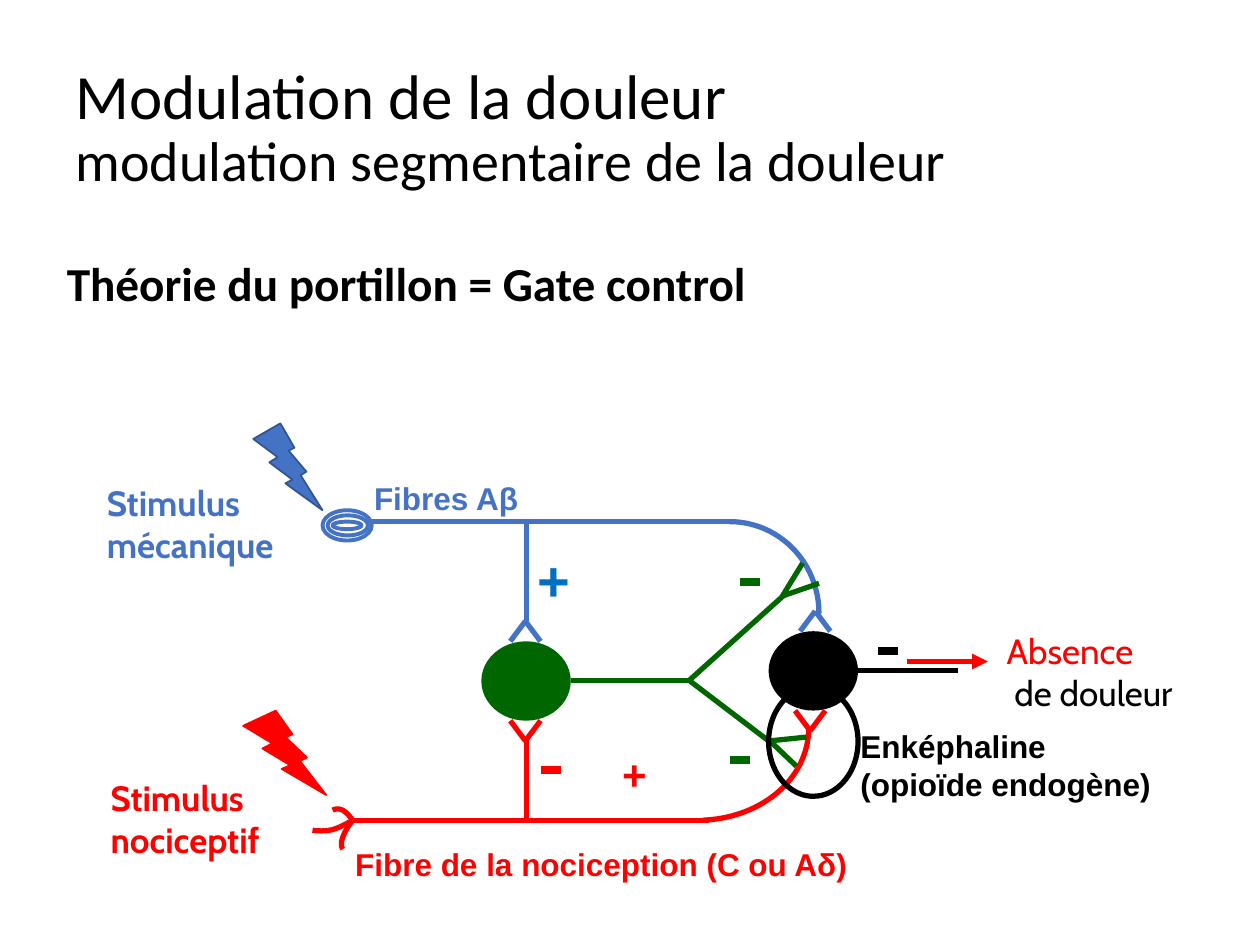
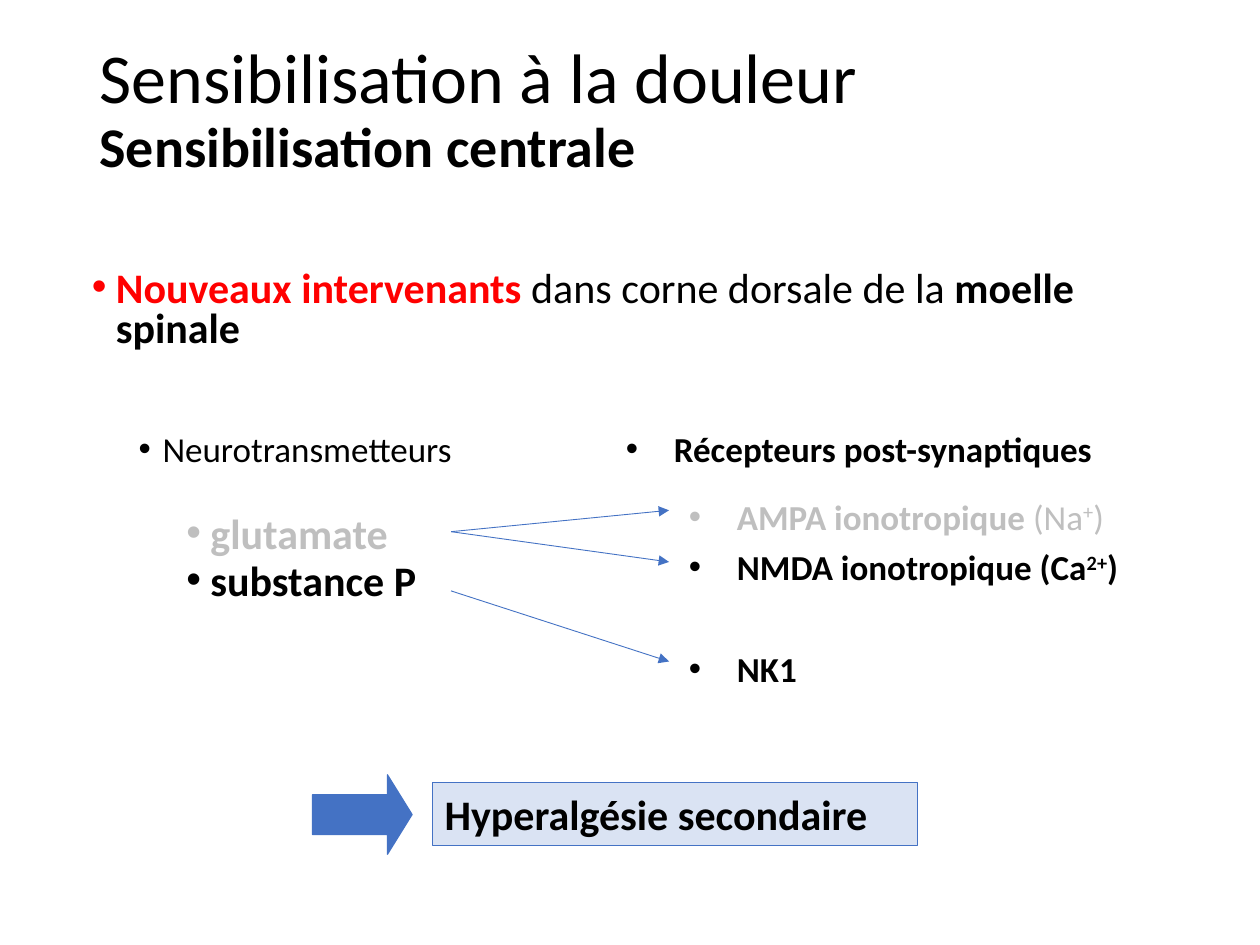
"""Build two slides on pain modulation and central sensitisation."""
import dataclasses
import itertools

import pptx
import pptx.dml.color
import pptx.enum.shapes
import pptx.enum.text
import pptx.oxml
import pptx.oxml.ns
import pptx.util

Inches, Pt = pptx.util.Inches, pptx.util.Pt
SHAPE = pptx.enum.shapes.MSO_SHAPE


@dataclasses.dataclass(frozen=True)
class Theme:
    black: str = "000000"
    blue: str = "4472C4"
    navy: str = "325491"
    azure: str = "0070C0"
    pale: str = "DAE3F3"
    red: str = "FF0000"
    green: str = "006600"
    grey: str = "BFBFBF"
    body: str = "Calibri"
    diagram: str = "Arial"
    stimulus: str = "Cabin"
    title: int = 40
    title_small: int = 36
    subtitle: int = 32
    lead: int = 27
    strong: int = 24
    text: int = 20
    label: int = 18
    stroke: float = 3
    minus: float = 4.5


T = Theme()


def run(text, size, color=T.black, bold=False, font=T.body, raised=False):
    return dict(text=text, size=size, color=color, bold=bold, font=font, raised=raised)


def para(*runs, **layout):
    return dict(runs=runs, **layout)


def bullet(*runs, level=0, left=0.19, hang=0.19, spacing=0.8, before=0):
    return para(*runs, level=level, left=left, hang=hang, spacing=spacing, before=before, mark="•")


def label(lines, size, color, font=T.diagram, bold=True):
    return [para(run(line, size, color, bold, font)) for line in lines]


GATE_TITLE = [para(run("Modulation de la douleur", T.title_small), spacing=0.9),
              para(run("modulation segmentaire de la douleur", T.subtitle), spacing=0.9)]
GATE_BODY = [para(run("Théorie du portillon = Gate control", T.lead, bold=True),
                  spacing=0.9, before=7.5, left=0, hang=0, mark=None)]

CURVES = [
    (T.blue, [(5.79, 4.14), (6.18, 4.14), (6.5, 4.46), (6.5, 4.87)]),
    (T.red, [(5.58, 6.51), (6.05, 6.49), (6.42, 6.18), (6.42, 5.77)]),
    (T.red, [(2.8, 6.51), (2.75, 6.44), (2.7, 6.4), (2.64, 6.43)]),
    (T.red, [(2.8, 6.51), (2.69, 6.57), (2.63, 6.61), (2.48, 6.59)]),
    (T.red, [(2.8, 6.51), (2.73, 6.6), (2.69, 6.69), (2.72, 6.74)]),
]
NERVES = [
    (T.blue, [(2.95, 4.14), (5.79, 4.14)]),
    (T.blue, [(4.18, 4.14), (4.18, 4.93)]),
    (T.red, [(2.8, 6.51), (5.63, 6.51)]),
    (T.red, [(4.18, 5.88), (4.18, 6.51)]),
    (T.green, [(4.53, 5.4), (5.47, 5.4), (6.26, 4.69)]),
    (T.green, [(5.47, 5.4), (6.1, 5.88)]),
    (T.green, [(6.37, 4.47), (6.21, 4.73), (6.5, 4.63)]),
    (T.green, [(6.32, 6.08), (6.11, 5.88), (6.4, 5.85)]),
    (T.black, [(6.81, 5.32), (7.6, 5.32)]),
]
SYNAPSES = [(T.red, 4.17, 5.88, -0.16), (T.blue, 4.17, 4.93, 0.16),
            (T.red, 6.43, 5.8, -0.16), (T.blue, 6.47, 4.85, 0.16)]
MINUS_SIGNS = [(T.red, 4.29, 6.11), (T.black, 6.97, 5.17),
               (T.green, 5.79, 6.03), (T.green, 5.87, 4.62)]
CELLS = [((3.82, 5.09, 0.71, 0.63), T.green), ((6.1, 5.01, 0.71, 0.63), T.black)]
RINGS = [((6.1, 5.45, 0.71, 0.87), T.black, T.stroke)] + [
    (box, T.blue, 2.25) for box in
    [(2.56, 4.05, 0.39, 0.24), (2.6, 4.09, 0.32, 0.16), (2.64, 4.14, 0.23, 0.06)]]
BOLTS = [((2.01, 3.36, 0.55, 0.69), T.blue, T.navy), ((1.93, 5.64, 0.66, 0.67), T.red, T.red)]
LABELS = [
    ((7.89, 4.95, 1.61, 0.77), False,
     label(["Absence"], T.text, T.red, T.stimulus, False)
     + label([" de douleur"], T.text, T.black, T.stimulus, False)),
    ((4.84, 5.89, 0.4, 0.5), False, label(["+"], T.strong, T.red)),
    ((4.17, 4.28, 0.46, 0.63), False, label(["+"], T.subtitle, T.azure)),
    ((6.73, 5.72, 2.51, 0.7), False,
     label(["Enképhaline", "(opioïde endogène)"], T.label, T.black)),
    ((2.72, 6.66, 4.12, 0.4), False,
     label(["Fibre de la nociception (C ou Aδ)"], T.label, T.red)),
    ((2.87, 3.75, 1.35, 0.4), False, label(["Fibres Aβ"], T.label, T.blue)),
    ((0.75, 3.77, 1.83, 0.77), True,
     label(["Stimulus mécanique"], T.text, T.blue, T.stimulus)),
    ((0.78, 6.11, 1.73, 0.77), True,
     label(["Stimulus nociceptif"], T.text, T.red, T.stimulus)),
]

CENTRAL_TITLE = [para(run("Sensibilisation à la douleur", T.title), spacing=0.9),
                 para(run("Sensibilisation centrale", T.subtitle, bold=True), spacing=0.9)]
CENTRAL_BODY = [
    bullet(run("Nouveaux intervenants ", T.strong, T.red, True),
           run("dans corne dorsale de la ", T.strong),
           run("moelle spinale", T.strong, bold=True), before=7.5),
    bullet(run("Neurotransmetteurs", T.text), level=1, left=0.56, before=48.3),
    bullet(run("glutamate", T.strong, T.grey, True), level=2, left=0.94, before=27.1),
    bullet(run("substance P", T.strong, bold=True), level=2, left=0.94, before=3.8),
]
RECEPTORS = [
    bullet(run("Récepteurs post-synaptiques", T.text, bold=True), level=1, left=0.88, hang=0.38),
    bullet(run("AMPA ionotropique ", T.text, T.grey, True), run("(Na", T.text, T.grey),
           run("+", T.text, T.grey, raised=True), run(")", T.text, T.grey),
           level=2, left=1.38, hang=0.38, before=19.5),
    bullet(run("NMDA ionotropique (Ca", T.text, bold=True),
           run("2+", T.text, bold=True, raised=True), run(")", T.text, bold=True),
           level=2, left=1.38, hang=0.38, spacing=1.2),
    bullet(run("NK1", T.text, bold=True),
           level=2, left=1.38, hang=0.38, spacing=1.2, before=29.3),
]
BINDINGS = [((3.58, 4.22), (5.31, 4.05)), ((3.58, 4.22), (5.31, 4.46)),
            ((3.58, 4.69), (5.31, 5.25))]
OUTCOME = [para(run("Hyperalgésie secondaire", T.strong, bold=True))]


def rgb(color):
    return pptx.dml.color.RGBColor.from_string(color)


def add_xml(parent, tag, **attrs):
    el = pptx.oxml.ns.qn(tag)
    child = parent.makeelement(el, attrs)
    parent.append(child)


def write(tf, paras, wrap=True, anchor="TOP"):
    tf.word_wrap = wrap
    tf.auto_size = pptx.enum.text.MSO_AUTO_SIZE.NONE
    tf.vertical_anchor = pptx.enum.text.MSO_ANCHOR[anchor]
    for i, item in enumerate(paras):
        p = tf.add_paragraph() if i else tf.paragraphs[0]
        p.alignment = pptx.enum.text.PP_ALIGN.LEFT
        p.level = item.get("level", 0)
        p.line_spacing = item.get("spacing", 1.0)
        p.space_before = Pt(item.get("before", 0))
        if "mark" in item:
            pPr = p._p.get_or_add_pPr()
            pPr.set("marL", str(Inches(item["left"])))
            pPr.set("indent", str(-Inches(item["hang"])))
            if item["mark"]:
                add_xml(pPr, "a:buFont", typeface="Arial")
                add_xml(pPr, "a:buChar", char=item["mark"])
            else:
                add_xml(pPr, "a:buNone")
        for style in item["runs"]:
            r = p.add_run()
            r.text = style["text"]
            r.font.size, r.font.bold, r.font.name = Pt(style["size"]), style["bold"], style["font"]
            r.font.color.rgb = rgb(style["color"])
            if style["raised"]:
                r.font._element.set("baseline", "30000")


def place(sp, box):
    sp.left, sp.top, sp.width, sp.height = map(Inches, box)


def paint(sp, fill=None, line=None, width=0.75):
    if fill:
        sp.fill.solid()
        sp.fill.fore_color.rgb = rgb(fill)
    else:
        sp.fill.background()
    if line:
        sp.line.color.rgb = rgb(line)
        sp.line.width = Pt(width)
    else:
        sp.line.fill.background()


def add_shape(s, kind, box, *style):
    sp = s.shapes.add_shape(kind, *map(Inches, box))
    sp.shadow.inherit = False
    paint(sp, *style)
    return sp


def add_text(s, box, paras, wrap=True):
    sp = s.shapes.add_textbox(*map(Inches, box))
    write(sp.text_frame, paras, wrap)
    return sp


def add_line(s, start, end, color, width=T.stroke, arrow=False):
    cx = s.shapes.add_connector(pptx.enum.shapes.MSO_CONNECTOR.STRAIGHT,
                                *map(Inches, (*start, *end)))
    cx.line.color.rgb = rgb(color)
    cx.line.width = Pt(width)
    if arrow:
        add_xml(cx.line._get_or_add_ln(), "a:tailEnd", type="triangle")
    add_xml(cx._element.spPr, "a:effectLst")


def add_polyline(s, color, points):
    for start, end in itertools.pairwise(points):
        add_line(s, start, end, color)


def add_curve(s, color, controls, steps=24):
    points = []
    for t in (i / steps for i in range(steps + 1)):
        weights = ((1 - t) ** 3, 3 * t * (1 - t) ** 2, 3 * t * t * (1 - t), t ** 3)
        points.append(tuple(Inches(sum(w * c for w, c in zip(weights, axis)))
                            for axis in zip(*controls)))
    builder = s.shapes.build_freeform(*points[0])
    builder.add_line_segments(points[1:], close=False)
    sp = builder.convert_to_shape()
    sp.shadow.inherit = False
    paint(sp, None, color, T.stroke)


def add_slide(prs, title, title_box, body, body_box):
    s = prs.slides.add_slide(prs.slide_layouts[1])
    place(s.shapes.title, title_box)
    write(s.shapes.title.text_frame, title, anchor="MIDDLE")
    place(s.placeholders[1], body_box)
    write(s.placeholders[1].text_frame, body)
    return s


def build_gate_control(prs):
    s = add_slide(prs, GATE_TITLE, (0.5, 0.28, 9, 1.5), GATE_BODY, (0.43, 2.02, 9.29, 4.5))
    for color, controls in CURVES:
        add_curve(s, color, controls)
    for box, color in CELLS:
        add_shape(s, SHAPE.OVAL, box, color)
    for color, points in NERVES:
        add_polyline(s, color, points)
    for color, x, y, rise in SYNAPSES:
        add_polyline(s, color, [(x - 0.12, y + rise), (x, y), (x + 0.12, y + rise)])
    for color, x, y in MINUS_SIGNS:
        add_line(s, (x, y), (x + 0.16, y), color, T.minus)
    add_line(s, (7.2, 5.25), (7.84, 5.25), T.red, arrow=True)
    for box, wrap, paras in LABELS:
        add_text(s, box, paras, wrap)
    for box, color, width in RINGS:
        add_shape(s, SHAPE.OVAL, box, None, color, width)
    for box, fill, line in BOLTS:
        add_shape(s, SHAPE.LIGHTNING_BOLT, box, fill, line, 1)


def build_central_sensitisation(prs):
    s = add_slide(prs, CENTRAL_TITLE, (0.69, 0.16, 8.62, 1.45),
                  CENTRAL_BODY, (0.63, 2.1, 8.74, 2.83))
    arrow = add_shape(s, SHAPE.RIGHT_ARROW, (2.48, 6.15, 0.79, 0.63), T.blue, T.blue)
    arrow.adjustments[1] = 0.31
    paint(add_text(s, (3.43, 6.21, 3.85, 0.5), OUTCOME), T.pale, T.blue)
    add_text(s, (4.37, 3.41, 5, 2.09), RECEPTORS)
    for start, end in BINDINGS:
        add_line(s, start, end, T.blue, 0.5, arrow=True)


def main():
    prs = pptx.Presentation()
    prs.slide_width, prs.slide_height = Inches(10), Inches(7.5)
    build_gate_control(prs)
    build_central_sensitisation(prs)
    prs.save("out.pptx")


if __name__ == "__main__":
    main()
